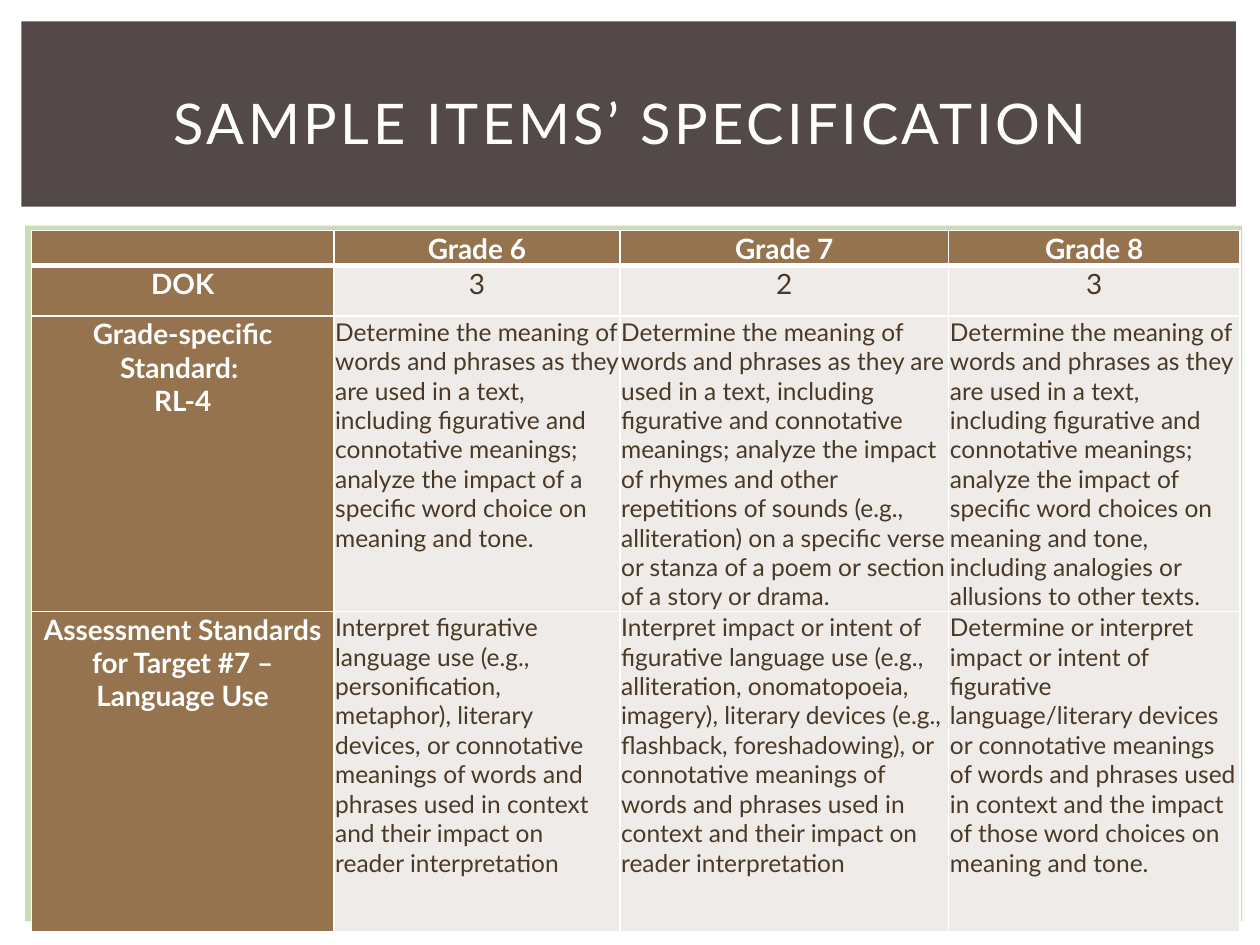
from lxml import etree
from pptx import Presentation
from pptx.dml.color import RGBColor
from pptx.enum.shapes import MSO_SHAPE
from pptx.enum.text import MSO_ANCHOR, PP_ALIGN
from pptx.oxml.ns import qn
from pptx.util import Inches, Pt

RECTANGLE = MSO_SHAPE.RECTANGLE
MIDDLE = MSO_ANCHOR.MIDDLE
CENTER, LEFT = PP_ALIGN.CENTER, PP_ALIGN.LEFT

WHITE, GREEN, CHARCOAL = "FFFFFF", "CBDCB6", "534949"
BROWN, CREAM, DARK_BROWN = "94734E", "EEEBE9", "4A3927"

COLUMN_WIDTHS = [2.4, 2.27, 2.61, 2.31]
ROW_HEIGHTS = [0.27, 0.4, 2.28, 2.54]
ROWS = [
    ["", "Grade 6", "Grade 7", "Grade 8"],
    ["DOK", "3", "2", "3"],
    [
        "Grade-specific Standard: \nRL-4",
        "Determine the meaning of words and phrases as they are used in a text, "
        "including figurative and connotative meanings; analyze the impact of a "
        "specific word choice on meaning and tone.",
        "Determine the meaning of words and phrases as they are used in a text, "
        "including figurative and connotative meanings; analyze the impact of "
        "rhymes and other repetitions of sounds (e.g., alliteration) on a specific "
        "verse or stanza of a poem or section of a story or drama.",
        "Determine the meaning of words and phrases as they are used in a text, "
        "including figurative and connotative meanings; analyze the impact of "
        "specific word choices on meaning and tone, including analogies or "
        "allusions to other texts.",
    ],
    [
        "Assessment Standards for Target #7 – Language Use",
        "Interpret figurative language use (e.g., personification, metaphor), "
        "literary devices, or connotative meanings of words and phrases used in "
        "context and their impact on reader interpretation",
        "Interpret impact or intent of figurative language use (e.g., "
        "alliteration, onomatopoeia, imagery), literary devices (e.g., flashback, "
        "foreshadowing), or connotative meanings of words and phrases used in "
        "context and their impact on reader interpretation",
        "Determine or interpret impact or intent of figurative language/literary "
        "devices or connotative meanings of words and phrases used in context and "
        "the impact of those word choices on meaning and tone.",
    ],
]


def rgb(color):
    return RGBColor.from_string(color)


class SlideBuilder:
    font = "Lato"

    def __init__(self, page):
        self.page = page

    def fill_text(self, frame, text, size, color, bold=False, align=CENTER, spacing=0):
        """Fill a text frame; spacing is the letter spacing in points."""
        frame.text = text
        for para in frame.paragraphs:
            para.alignment = align
            for span in para.runs:
                span.font.name = self.font
                span.font.size = Pt(size)
                span.font.bold = bold
                span.font.color.rgb = rgb(color)
                if spacing:
                    span.font._element.set("spc", str(spacing * 100))
            if not para.runs:
                end = etree.SubElement(para._p, qn("a:endParaRPr"))
                end.set("sz", str(size * 100))

    def rectangle(self, left, top, width, height, color):
        box = self.page.shapes.add_shape(
            RECTANGLE, Inches(left), Inches(top), Inches(width), Inches(height))
        box.shadow.inherit = False
        box.fill.solid()
        box.fill.fore_color.rgb = rgb(color)
        box.line.fill.background()

    def title(self, left, top, width, height, text):
        box = self.page.shapes.add_textbox(
            Inches(left), Inches(top), Inches(width), Inches(height))
        frame = box.text_frame
        frame.word_wrap = True
        frame.vertical_anchor = MIDDLE
        self.fill_text(frame, text, 32, WHITE, spacing=2)

    def borders(self, cell, top, bottom):
        """Draw white cell borders, with top and bottom widths in points."""
        properties = cell._tc.get_or_add_tcPr()
        for side, width in (("L", 1), ("R", 1), ("T", top), ("B", bottom)):
            line = etree.SubElement(properties, qn(f"a:ln{side}"), w=str(Pt(width)))
            fill = etree.SubElement(line, qn("a:solidFill"))
            etree.SubElement(fill, qn("a:srgbClr"), val=WHITE)

    def table(self, left, top, widths, heights, rows):
        table = self.page.shapes.add_table(
            len(rows), len(widths), Inches(left), Inches(top),
            Inches(sum(widths)), Inches(sum(heights))).table
        for column, width in zip(table.columns, widths):
            column.width = Inches(width)
        for row, height in zip(table.rows, heights):
            row.height = Inches(height)
        for r, texts in enumerate(rows):
            for c, text in enumerate(texts):
                cell = table.cell(r, c)
                cell.margin_left = cell.margin_right = cell.margin_top = Inches(0.01)
                cell.margin_bottom = 0
                self.borders(cell, 3 if r == 1 else 1, 3 if r == 0 else 1)
                heading = r == 0 or c == 0
                prose = r > 1 and not heading
                cell.fill.solid()
                cell.fill.fore_color.rgb = rgb(BROWN if heading else CREAM)
                self.fill_text(cell.text_frame, text, 14 if prose else 16,
                               WHITE if heading else DARK_BROWN, bold=heading,
                               align=LEFT if prose else CENTER)


def main():
    deck = Presentation()
    deck.slide_width, deck.slide_height = Inches(10), Inches(7.5)
    builder = SlideBuilder(deck.slides.add_slide(deck.slide_layouts[6]))
    builder.rectangle(0.2, 1.79, 9.66, 5.52, GREEN)
    builder.rectangle(0.17, 0.17, 9.64, 1.47, CHARCOAL)
    builder.title(0.42, 0.39, 9.17, 1.15, "SAMPLE ITEMS’ SPECIFICATION")
    builder.table(0.25, 1.83, COLUMN_WIDTHS, ROW_HEIGHTS, ROWS)
    deck.save("out.pptx")


if __name__ == "__main__":
    main()
